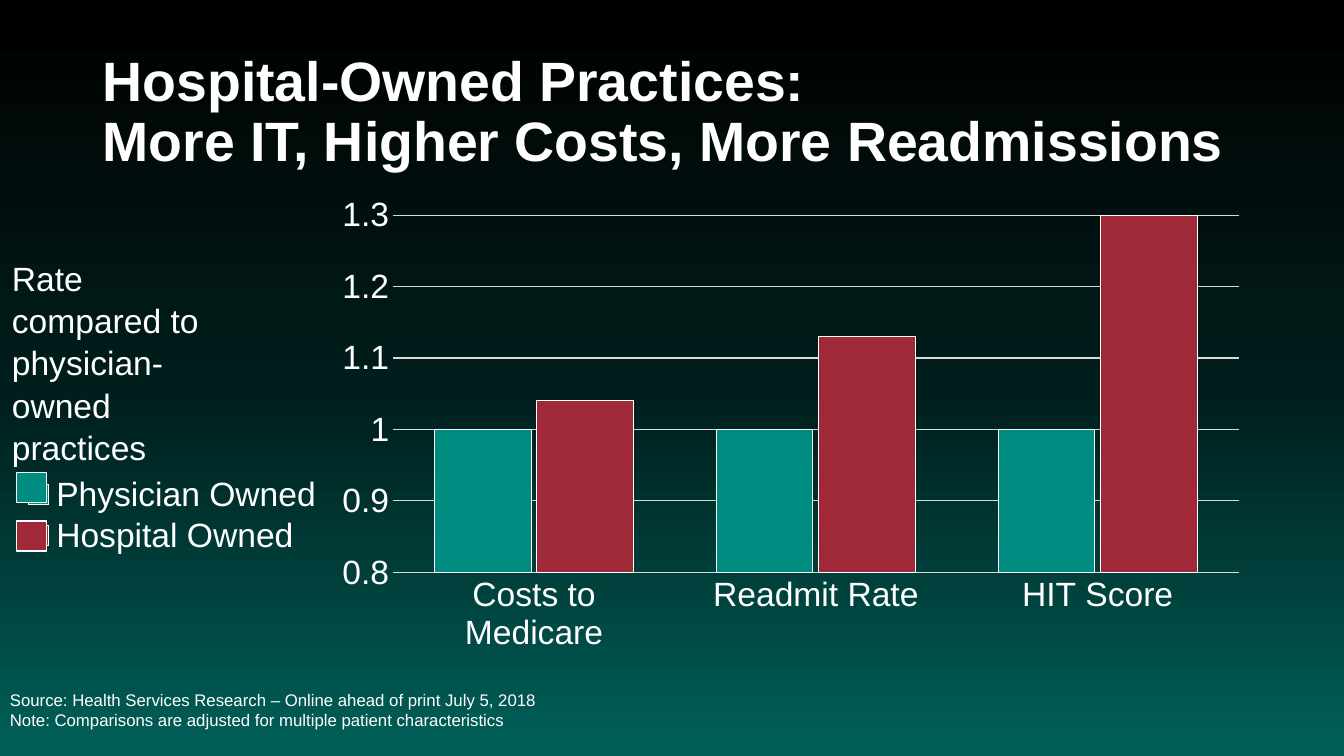
from dataclasses import dataclass

from lxml import etree
from pptx import Presentation
from pptx.chart.data import CategoryChartData
from pptx.dml.color import RGBColor
from pptx.enum import chart as ch, shapes, text
from pptx.oxml import ns
from pptx.util import Cm, Pt


@dataclass(frozen=True)
class Theme:
    font: str = "Arial"
    ink: str = "FFFFFF"
    grid: str = "D9D9D9"
    physician: str = "008C81"
    hospital: str = "9F2936"
    backdrop: tuple = ((0, "000000"), (52, "001E1C"), (100, "006059"))
    title_size: float = 39.6
    label_size: float = 24
    source_size: float = 12


THEME = Theme()
OWNERS = (
    ("Physician Owned", THEME.physician, (1, 1, 1)),
    ("Hospital Owned", THEME.hospital, (1.04, 1.13, 1.3)),
)
MEASURES = ("Costs to Medicare", "Readmit Rate", "HIT Score")


def rgb(value):
    return RGBColor.from_string(value)


def style_font(font, size, bold=False):
    font.name, font.size, font.bold = THEME.font, Pt(size), bold
    font.color.rgb = rgb(THEME.ink)


def style_line(line, color, width):
    line.color.rgb = rgb(color)
    line.width = Pt(width)


def write(frame, content, size, bold=False, spacing=1.0,
          anchor=text.MSO_ANCHOR.TOP):
    """Fill a text frame, one paragraph per line of content."""
    frame.word_wrap = True
    frame.auto_size = text.MSO_AUTO_SIZE.NONE
    frame.vertical_anchor = anchor
    frame.text = content
    for paragraph in frame.paragraphs:
        paragraph.alignment = text.PP_ALIGN.LEFT
        paragraph.line_spacing = spacing
        for run in paragraph.runs:
            style_font(run.font, size, bold)


def paint_backdrop(slide):
    """Set a three-stop gradient running from top to bottom."""
    fill = slide.background.fill
    fill.gradient()
    gradient = slide.element.find(".//" + ns.qn("a:gradFill"))
    stops = gradient.find(ns.qn("a:gsLst"))
    for stop in list(stops):
        stops.remove(stop)
    for percent, color in THEME.backdrop:
        stop = etree.SubElement(stops, ns.qn("a:gs"), pos=str(percent * 1000))
        etree.SubElement(stop, ns.qn("a:srgbClr"), val=color)
    gradient.find(ns.qn("a:lin")).set("ang", "5400000")


def place_title(slide, left, top, width, height):
    title = slide.shapes.title
    title.left, title.top, title.width, title.height = left, top, width, height
    write(title.text_frame,
          "Hospital-Owned Practices:\vMore IT, Higher Costs, More Readmissions",
          THEME.title_size, bold=True, spacing=0.9,
          anchor=text.MSO_ANCHOR.MIDDLE)


def place_source(slide, left, top, width, height):
    source = slide.shapes.add_textbox(left, top, width, height)
    write(source.text_frame,
          "Source: Health Services Research – Online ahead of print July 5, 2018\n"
          "Note: Comparisons are adjusted for multiple patient characteristics",
          THEME.source_size, anchor=text.MSO_ANCHOR.MIDDLE)


def place_rate_label(slide, left, top, width, height):
    rate = slide.shapes.add_textbox(left, top, width, height)
    write(rate.text_frame, "Rate compared to physician-owned practices",
          THEME.label_size, spacing=1.05)


def set_layout(parent, position, x, y, w, h, inner=False):
    """Fix the place of a chart part as fractions of the chart."""
    for old in parent.findall(ns.qn("c:layout")):
        parent.remove(old)
    layout = etree.Element(ns.qn("c:layout"))
    manual = etree.SubElement(layout, ns.qn("c:manualLayout"))
    settings = [("layoutTarget", "inner")] if inner else []
    settings += [("xMode", "edge"), ("yMode", "edge"),
                 ("x", x), ("y", y), ("w", w), ("h", h)]
    for tag, value in settings:
        etree.SubElement(manual, ns.qn("c:" + tag), val=str(value))
    parent.insert(position, layout)


def place_chart(slide, left, top, width, height):
    data = CategoryChartData()
    data.categories = MEASURES
    for owner, _, rates in OWNERS:
        data.add_series(owner, rates)
    chart = slide.shapes.add_chart(ch.XL_CHART_TYPE.COLUMN_CLUSTERED,
                                   left, top, width, height, data).chart
    chart.has_title = False
    style_font(chart.font, THEME.label_size)

    plot = chart.plots[0]
    plot.gap_width, plot.overlap, plot.vary_by_categories = 86, -6, False
    for series, (_, color, _) in zip(plot.series, OWNERS):
        series.format.fill.solid()
        series.format.fill.fore_color.rgb = rgb(color)
        style_line(series.format.line, THEME.ink, 0.75)

    for axis in (chart.category_axis, chart.value_axis):
        axis.major_tick_mark = axis.minor_tick_mark = ch.XL_TICK_MARK.NONE
        style_font(axis.tick_labels.font, THEME.label_size)
    style_line(chart.category_axis.format.line, THEME.grid, 0.75)
    rate_axis = chart.value_axis
    rate_axis.minimum_scale, rate_axis.maximum_scale = 0.8, 1.32
    rate_axis.major_unit = 0.1
    rate_axis.format.line.fill.background()
    style_line(rate_axis.major_gridlines.format.line, THEME.grid, 0.75)

    chart.has_legend = True
    legend = chart.legend
    legend.position = ch.XL_LEGEND_POSITION.LEFT
    legend.include_in_layout = False
    style_font(legend.font, THEME.label_size)
    plot_area = chart.element.find(".//" + ns.qn("c:plotArea"))
    set_layout(plot_area, 0, 0.31, 0.03, 0.67, 0.78, inner=True)
    set_layout(chart.element.find(".//" + ns.qn("c:legend")), 1,
               0.01, 0.6, 0.25, 0.18)


def place_legend_keys(slide, left, top, side, pitch):
    for row, (_, color, _) in enumerate(OWNERS):
        key = slide.shapes.add_shape(shapes.MSO_SHAPE.RECTANGLE,
                                     left, top + row * pitch, side, side)
        key.shadow.inherit = False
        key.fill.solid()
        key.fill.fore_color.rgb = rgb(color)
        style_line(key.line, THEME.ink, 1)


def main():
    deck = Presentation()
    deck.slide_width, deck.slide_height = Cm(33.87), Cm(19.05)
    slide = deck.slides.add_slide(deck.slide_layouts.get_by_name("Title Only"))
    paint_backdrop(slide)
    place_title(slide, Cm(2.33), Cm(1.01), Cm(29.21), Cm(3.68))
    place_source(slide, Cm(0), Cm(16.71), Cm(22.86), Cm(2.34))
    place_rate_label(slide, Cm(0.05), Cm(6.32), Cm(6.05), Cm(5.38))
    place_chart(slide, Cm(0.05), Cm(4.7), Cm(31.8), Cm(12.01))
    place_legend_keys(slide, Cm(0.42), Cm(11.91), Cm(0.76), Cm(1.22))
    deck.save("out.pptx")


if __name__ == "__main__":
    main()
